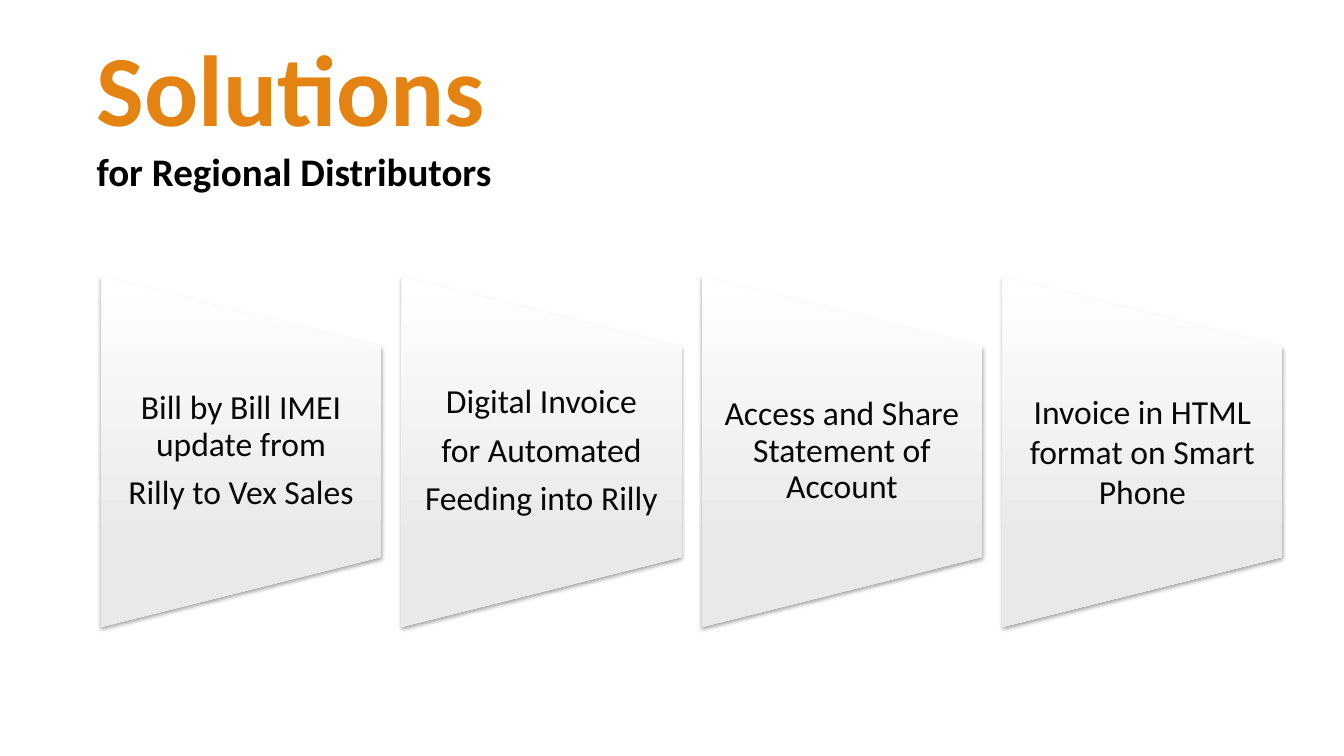
from lxml import etree
from pptx import Presentation
from pptx import util as u
from pptx.dml.color import RGBColor
from pptx.enum import shapes, text
from pptx.oxml.ns import qn


def rgb(value):
    return RGBColor.from_string(value)


def add_run(paragraph, words, size, color, bold=False):
    run = paragraph.add_run()
    run.text = words
    run.font.color.rgb = rgb(color)
    for key, value in {"name": "Calibri", "size": u.Pt(size), "bold": bold}.items():
        setattr(run.font, key, value)


deck = Presentation()
deck.slide_width, deck.slide_height = u.Inches(13.33), u.Inches(7.5)
slide = deck.slides.add_slide(deck.slide_layouts[6])

heading = slide.shapes.add_textbox(u.Inches(0.86), u.Inches(0.39), u.Inches(9.4), u.Inches(1.57)).text_frame
heading.word_wrap = True
heading.margin_top = heading.margin_bottom = 0
title = heading.paragraphs[0]
title.line_spacing = 0.9
add_run(title, "Solutions", 72, "E48312", True)
audience = heading.add_paragraph()
audience.line_spacing = 0.9
audience.space_before = u.Pt(3)
add_run(audience, "for Regional Distributors", 27.9, "000000", True)

solutions = [
    (["Bill by Bill IMEI update from", "Rilly to Vex Sales"], 0.9, 8.4),
    (["Digital Invoice", "for Automated", "Feeding into Rilly"], 0.9, 8.4),
    (["Access and Share Statement of Account"], 0.9, 8.4),
    (["Invoice in HTML format on Smart Phone"], 1.0, 0),
]
panel_width, panel_height, pitch = 2.78, 3.48, 2.98
first_left, panel_top = 1.0, 2.74
turn_shift = (panel_height - panel_width) / 2

for index, (lines, spacing, after) in enumerate(solutions):
    left = first_left + index * pitch
    panel = slide.shapes.add_shape(
        shapes.MSO_SHAPE.FLOWCHART_MANUAL_OPERATION,
        u.Inches(left - turn_shift), u.Inches(panel_top + turn_shift),
        u.Inches(panel_height), u.Inches(panel_width))
    panel.rotation = 270
    panel.line.fill.background()
    panel.fill.gradient()
    panel.fill.gradient_angle = 270
    for stop, (position, color) in zip(panel.fill.gradient_stops, [(0, "FFFFFF"), (0.78, "E9E9E9")]):
        stop.position = position
        stop.color.rgb = rgb(color)
    properties = panel.element.spPr
    properties.find(qn("a:gradFill")).set("rotWithShape", "0")
    panel.shadow.inherit = False
    shadow = etree.SubElement(
        properties.find(qn("a:effectLst")), qn("a:outerShdw"),
        blurRad=str(u.Pt(3)), dist=str(u.Pt(2)), dir="5400000", rotWithShape="0")
    shade = etree.SubElement(shadow, qn("a:srgbClr"), val="000000")
    etree.SubElement(shade, qn("a:alpha"), val="35000")

    label = slide.shapes.add_textbox(
        u.Inches(left), u.Inches(3.43), u.Inches(panel_width), u.Inches(2.09)).text_frame
    label_format = {
        "word_wrap": True, "vertical_anchor": text.MSO_ANCHOR.MIDDLE,
        "margin_left": u.Inches(0.17), "margin_right": u.Inches(0.17),
        "margin_top": 0, "margin_bottom": 0,
    }
    for key, value in label_format.items():
        setattr(label, key, value)
    for number, line in enumerate(lines):
        paragraph = label.add_paragraph() if number else label.paragraphs[0]
        paragraph.alignment = text.PP_ALIGN.CENTER
        paragraph.line_spacing = spacing
        paragraph.space_after = u.Pt(after)
        add_run(paragraph, line, 24, "080808")

deck.save("out.pptx")
